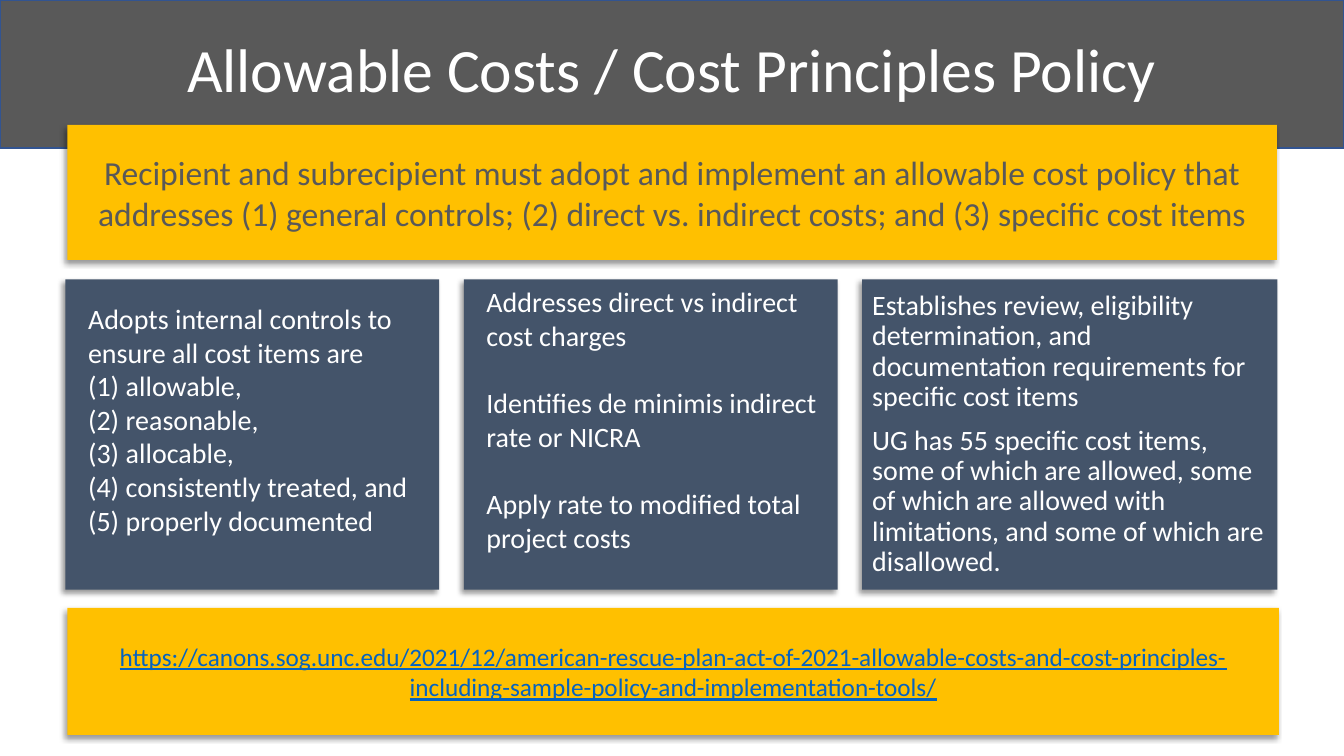
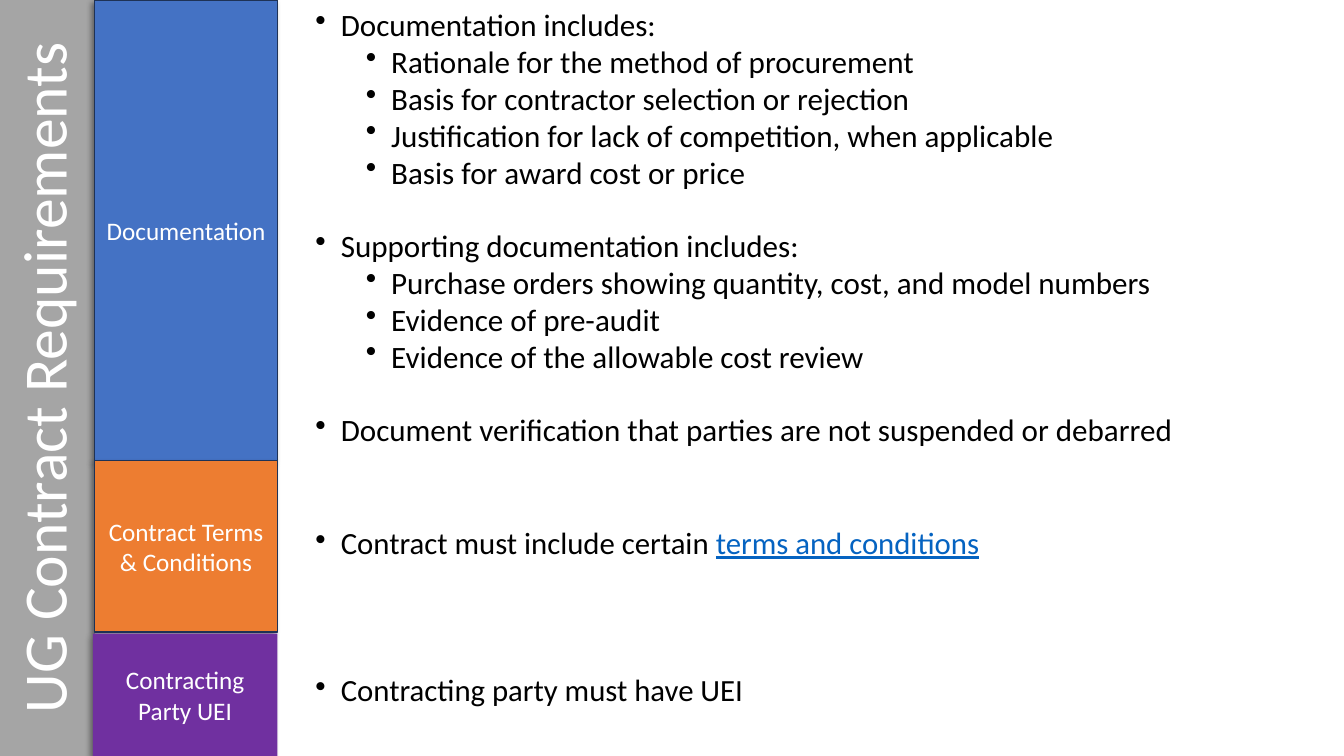
import dataclasses

import pptx
import pptx.dml.color
import pptx.enum.shapes
import pptx.enum.text
import pptx.oxml
import pptx.oxml.ns
import pptx.util

Cm = pptx.util.Cm
Pt = pptx.util.Pt
CENTER = pptx.enum.text.PP_ALIGN.CENTER
LEFT = pptx.enum.text.PP_ALIGN.LEFT
MIDDLE = pptx.enum.text.MSO_ANCHOR.MIDDLE
TOP = pptx.enum.text.MSO_ANCHOR.TOP

SLIDE_WIDTH, SLIDE_HEIGHT = 33.87, 19.05
FONT = "Calibri"
TITLE_SIZE = 44
WHITE, BLACK, CHARCOAL, GREY = "FFFFFF", "000000", "595959", "A5A5A5"
GOLD, SLATE, LINK = "FFC000", "44546A", "0563C1"
BLUE, ORANGE, PURPLE = "4472C4", "ED7D31", "7030A0"
BAND_EDGE, STAGE_EDGE = "325491", "1E3256"

NUMBER = '<a:buAutoNum %s type="arabicParenBoth"/>'
BULLET = '<a:buChar %s char="•"/>'
SHADOW = (
    '<a:effectLst %s><a:outerShdw blurRad="50800" dist="38100" dir="8100000" '
    'algn="tr" rotWithShape="0"><a:srgbClr val="000000"><a:alpha val="40000"/>'
    "</a:srgbClr></a:outerShdw></a:effectLst>"
)


@dataclasses.dataclass
class Line:
    """One paragraph: its text, link text, marker, indents and format."""

    text: str
    link: str = ""
    marker: str = ""
    margin: float = 0
    hanging: float = 0
    format: dict = dataclasses.field(default_factory=dict)


def rgb(code):
    """Turn a hex string into a colour."""
    return pptx.dml.color.RGBColor.from_string(code)


def element(template):
    """Build a drawing element from its XML template."""
    return pptx.oxml.parse_xml(template % pptx.oxml.ns.nsdecls("a"))


def apply(target, values):
    """Set each named attribute of the target."""
    for name, value in values.items():
        setattr(target, name, value)


def add_run(paragraph, text, size, color, underline=False):
    """Append a formatted run."""
    run = paragraph.add_run()
    run.text = text
    apply(run.font, {"name": FONT, "size": Pt(size), "underline": underline})
    run.font.color.rgb = rgb(color)


def write(frame, lines, size, color, align=CENTER, anchor=MIDDLE, **frame_format):
    """Fill a text frame with lines."""
    apply(frame, {"word_wrap": True, "vertical_anchor": anchor, **frame_format})
    for position, line in enumerate(lines):
        paragraph = frame.add_paragraph() if position else frame.paragraphs[0]
        properties = paragraph._p.get_or_add_pPr()
        properties.set("marL", str(Cm(line.margin)))
        properties.set("indent", str(-Cm(line.hanging)))
        if line.marker:
            properties.append(element(line.marker))
        apply(paragraph, {"alignment": align, **line.format})
        for text, shade, underline in ((line.text, color, False), (line.link, LINK, True)):
            if text:
                add_run(paragraph, text, size, shade, underline)


def add_panel(slide, box, fill, edge=None, shadow=True):
    """Draw a filled rectangle and return its text frame."""
    panel = slide.shapes.add_shape(
        pptx.enum.shapes.MSO_SHAPE.RECTANGLE, *map(Cm, box)
    )
    panel.fill.solid()
    panel.fill.fore_color.rgb = rgb(fill)
    if edge:
        panel.line.color.rgb = rgb(edge)
        panel.line.width = Pt(1)
    else:
        panel.line.fill.background()
    if shadow:
        panel._element.spPr.append(element(SHADOW))
    else:
        panel.shadow.inherit = False
    return panel.text_frame


def add_text(slide, box):
    """Add a text box and return its text frame."""
    return slide.shapes.add_textbox(*map(Cm, box)).text_frame


def bullet(text, level=1, spacing=0.8, before=5, link=""):
    """Describe a bulleted line at the given level."""
    return Line(text, link, BULLET, 0.64 + 1.27 * level, 0.64,
                {"line_spacing": spacing, "space_before": Pt(before)})


def build_cost_policy(slide):
    """Build the allowable costs slide."""
    add_panel(slide, (0, 0, SLIDE_WIDTH, 3.73), CHARCOAL, BAND_EDGE, shadow=False)
    write(add_text(slide, (2.33, 0, 29.21, 3.68)),
          [Line("Allowable Costs / Cost Principles Policy", format={"line_spacing": 0.9})],
          TITLE_SIZE, WHITE)

    requirement = (
        "Recipient and subrecipient must adopt and implement an allowable cost policy "
        "that addresses (1) general controls; (2) direct vs. indirect costs; "
        "and (3) specific cost items"
    )
    source = (
        "https://canons.sog.unc.edu/2021/12/american-rescue-plan-act-of-2021-"
        "allowable-costs-and-cost-principles-including-sample-policy-and-"
        "implementation-tools/"
    )
    banners = [
        (3.15, 30.48, 3.4, Line(requirement), 24),
        (15.32, 30.53, 3.2, Line("", source), 18),
    ]
    for top, width, height, line, size in banners:
        write(add_panel(slide, (1.7, top, width, height), GOLD), [line], size, CHARCOAL)

    controls = [Line("Adopts internal controls to ensure all cost items are", margin=0.32)]
    controls += [
        Line(test, marker=NUMBER, margin=1.27, hanging=0.95)
        for test in ("allowable,", "reasonable,", "allocable,",
                     "consistently treated, and", "properly documented")
    ]
    charges = [
        Line(text, margin=0.32, format={"space_before": Pt(before)})
        for text, before in (
            ("Addresses direct vs indirect cost charges", 0),
            ("Identifies de minimis indirect rate or NICRA", 24),
            ("Apply rate to modified total project costs", 24),
        )
    ]
    reviews = [
        Line(text, format={"line_spacing": 0.9, "space_before": Pt(before)})
        for text, before in (
            ("Establishes review, eligibility determination, and documentation "
             "requirements for specific cost items", 0),
            ("UG has 55 specific cost items, some of which are allowed, some of which "
             "are allowed with limitations, and some of which are disallowed.", 10),
        )
    ]
    left, gap = 1.65, 0.62
    for lines, width, bottom in ((controls, 9.42, 0.9), (charges, 9.42, 0.9),
                                 (reviews, 10.46, 0.13)):
        write(add_panel(slide, (left, 7.04, width, 7.82), SLATE), lines, 20, WHITE,
              LEFT, margin_bottom=Cm(bottom))
        left += width + gap


def build_contract_requirements(slide):
    """Build the contract requirements slide."""
    title = add_panel(slide, (0, 0, 2.39, SLIDE_HEIGHT), GREY)
    title._txBody.bodyPr.set("vert", "vert270")
    write(title, [Line("UG Contract Requirements")], TITLE_SIZE, WHITE, anchor=TOP)

    stages = [
        ("Documentation", (2.39, 0, 4.6, 11.61), BLUE, STAGE_EDGE),
        ("Contract Terms & Conditions", (2.39, 11.61, 4.6, 4.32), ORANGE, STAGE_EDGE),
        ("Contracting Party UEI", (2.34, 15.97, 4.65, 3.08), PURPLE, None),
    ]
    for name, box, fill, edge in stages:
        write(add_panel(slide, box, fill, edge), [Line(name)], 18, WHITE)

    documentation = [
        bullet("Documentation includes:", before=0),
        bullet("Rationale for the method of procurement", 2),
        bullet("Basis for contractor selection or rejection", 2),
        bullet("Justification for lack of competition, when applicable", 2),
        bullet("Basis for award cost or price", 2),
        bullet("Supporting documentation includes:", before=31.3),
        bullet("Purchase orders showing quantity, cost, and model numbers", 2),
        bullet("Evidence of pre-audit", 2),
        bullet("Evidence of the allowable cost review", 2),
        bullet("Document verification that parties are not suspended or debarred",
               before=31.3),
    ]
    terms = [bullet("Contract must include certain ", 1, 0.9, 0, "terms and conditions")]
    identifier = [bullet("Contracting party must have UEI", 1, 0.9, 0)]
    for lines, top, height, size in ((documentation, 0.2, 11.51, 22.2),
                                     (terms, 13.18, 2.1, 22),
                                     (identifier, 16.89, 2.1, 22)):
        write(add_text(slide, (6.43, top, 27.2, height)), lines, size, BLACK, LEFT, TOP)


def main():
    """Build and save the presentation."""
    deck = pptx.Presentation()
    apply(deck, {"slide_width": Cm(SLIDE_WIDTH), "slide_height": Cm(SLIDE_HEIGHT)})
    for build in (build_cost_policy, build_contract_requirements):
        build(deck.slides.add_slide(deck.slide_layouts[6]))
    deck.save("out.pptx")


if __name__ == "__main__":
    main()
